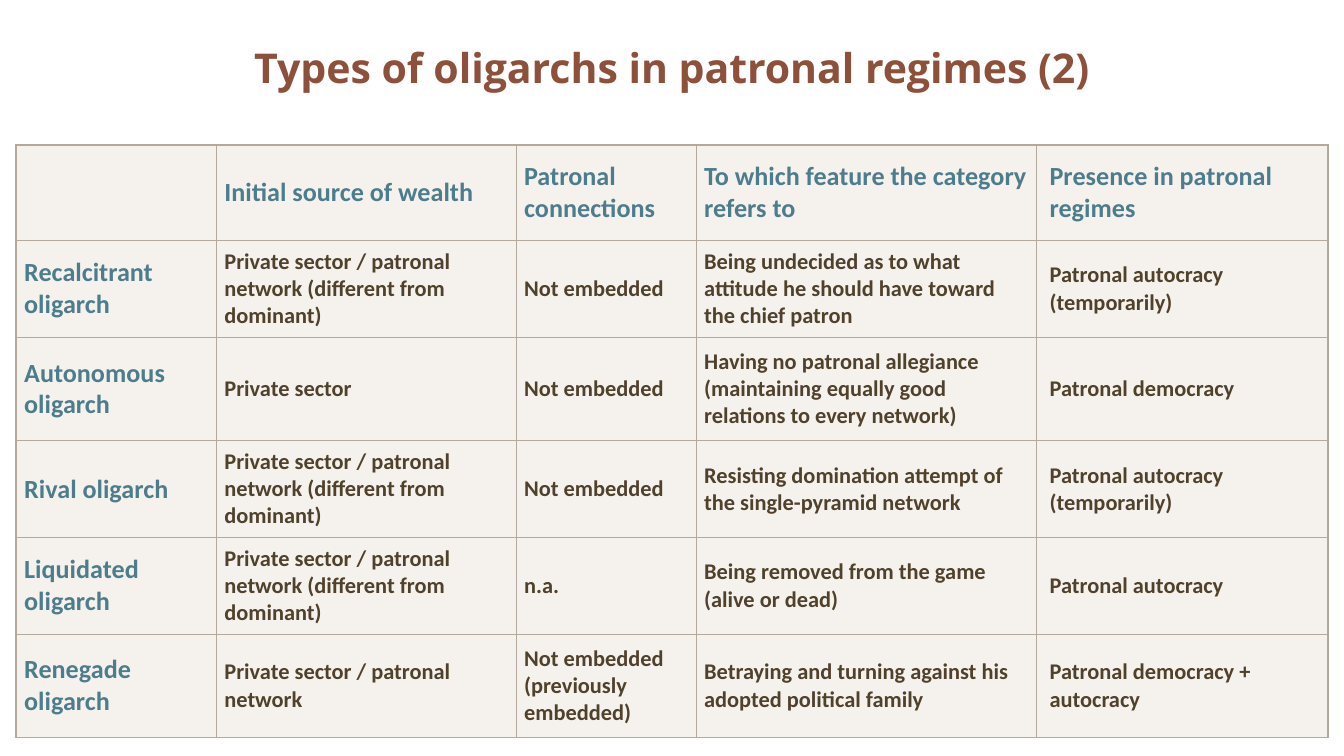
from lxml import etree
from pptx import Presentation
from pptx import util as u
from pptx.dml.color import RGBColor
from pptx.enum import text
from pptx.oxml.ns import qn

RUST = RGBColor(0x8D, 0x50, 0x3B)
TEAL = RGBColor(0x4D, 0x7C, 0x8B)
BROWN = RGBColor(0x50, 0x41, 0x2B)
SAND = RGBColor(0xEF, 0xEA, 0xE4)
TAUPE = RGBColor(0xB3, 0xAA, 0x9D)

TITLE = "Types of oligarchs in patronal regimes (2)"
MIXED_SOURCE = "Private sector / patronal network (different from dominant)"
ROWS = [
    ("", "Initial source of wealth", "Patronal connections",
     "To which feature the category refers to", "Presence in patronal regimes"),
    ("Recalcitrant oligarch", MIXED_SOURCE, "Not embedded",
     "Being undecided as to what attitude he should have toward the chief patron",
     "Patronal autocracy (temporarily)"),
    ("Autonomous oligarch", "Private sector", "Not embedded",
     "Having no patronal allegiance (maintaining equally good relations to every network)",
     "Patronal democracy"),
    ("Rival oligarch", MIXED_SOURCE, "Not embedded",
     "Resisting domination attempt of the single-pyramid network",
     "Patronal autocracy (temporarily)"),
    ("Liquidated oligarch", MIXED_SOURCE, "n.a.",
     "Being removed from the game (alive or dead)", "Patronal autocracy"),
    ("Renegade oligarch", "Private sector / patronal network",
     "Not embedded (previously embedded)",
     "Betraying and turning against his adopted political family",
     "Patronal democracy + autocracy"),
]
COLUMN_WIDTHS = [1.49, 2.23, 1.34, 2.53, 2.17]
ROW_HEIGHTS = [0.71, 0.72, 0.77, 0.72, 0.72, 0.77]
SLIDE_WIDTH = 10
SLIDE_HEIGHT = SLIDE_WIDTH * 9 / 16
MARGIN, TABLE_TOP, TITLE_HEIGHT = 0.12, 1.08, 1
TABLE_WIDTH = SLIDE_WIDTH - 2 * MARGIN
OUTER_LINE, INNER_LINE = 1, 0.5


def write(frame, words, *, size, color, font="Calibri", align=text.PP_ALIGN.LEFT, indent=0):
    paragraph = frame.paragraphs[0]
    paragraph.alignment = align
    if indent:
        paragraph._p.get_or_add_pPr().set("marL", str(u.Inches(indent)))
    target = paragraph.font
    if words:
        run = paragraph.add_run()
        run.text = words
        target = run.font
    target.name, target.size, target.bold = font, u.Pt(size), True
    target.color.rgb = color


def fill_cell(cell, color, opacity):
    cell.fill.solid()
    cell.fill.fore_color.rgb = color
    color_element = cell._tc.tcPr.find(f".//{qn('a:srgbClr')}")
    etree.SubElement(color_element, qn("a:alpha"), val=str(opacity * 1000))


def set_borders(cell, widths):
    """Draw borders, given in points as left, right, top, bottom."""
    for position, (side, width) in enumerate(zip("LRTB", widths)):
        line = etree.Element(qn(f"a:ln{side}"), w=str(u.Pt(width)))
        fill = etree.SubElement(line, qn("a:solidFill"))
        etree.SubElement(fill, qn("a:srgbClr"), val=str(TAUPE))
        cell._tc.get_or_add_tcPr().insert(position, line)


def add_title(slide):
    title = slide.shapes.title
    title.left, title.top = u.Inches(MARGIN), 0
    title.width, title.height = u.Inches(TABLE_WIDTH), u.Inches(TITLE_HEIGHT)
    title.text_frame.vertical_anchor = text.MSO_ANCHOR.MIDDLE
    write(title.text_frame, TITLE, size=22, color=RUST, font="Open Sans",
          align=text.PP_ALIGN.CENTER)


def add_oligarch_table(slide):
    last_row, last_column = len(ROWS) - 1, len(COLUMN_WIDTHS) - 1
    table = slide.shapes.add_table(
        len(ROWS), len(COLUMN_WIDTHS), u.Inches(MARGIN), u.Inches(TABLE_TOP),
        u.Inches(TABLE_WIDTH), u.Inches(sum(ROW_HEIGHTS))).table
    table.first_row = table.horz_banding = False
    for column, width in zip(table.columns, COLUMN_WIDTHS):
        column.width = u.Inches(width)
    for row, height in zip(table.rows, ROW_HEIGHTS):
        row.height = u.Inches(height)

    for r, row in enumerate(ROWS):
        for c, words in enumerate(row):
            cell = table.cell(r, c)
            is_last = c == last_column
            is_heading = r == 0 or c == 0
            cell.vertical_anchor = text.MSO_ANCHOR.MIDDLE
            cell.margin_left = cell.margin_right = u.Inches(0 if is_last else 0.06)
            cell.margin_top = cell.margin_bottom = u.Inches(0 if is_last else 0.03)
            write(cell.text_frame, words, size=14 if is_heading else 12,
                  color=TEAL if is_heading else BROWN, indent=0.1 if is_last else 0)
            fill_cell(cell, SAND, opacity=60)
            on_edge = (c == 0, is_last, r == 0, r == last_row)
            set_borders(cell, [OUTER_LINE if edge else INNER_LINE for edge in on_edge])


def main():
    presentation = Presentation()
    presentation.slide_width = u.Inches(SLIDE_WIDTH)
    presentation.slide_height = u.Inches(SLIDE_HEIGHT)
    title_only = presentation.slide_layouts.get_by_name("Title Only")
    slide = presentation.slides.add_slide(title_only)
    add_title(slide)
    add_oligarch_table(slide)
    presentation.save("out.pptx")


if __name__ == "__main__":
    main()
